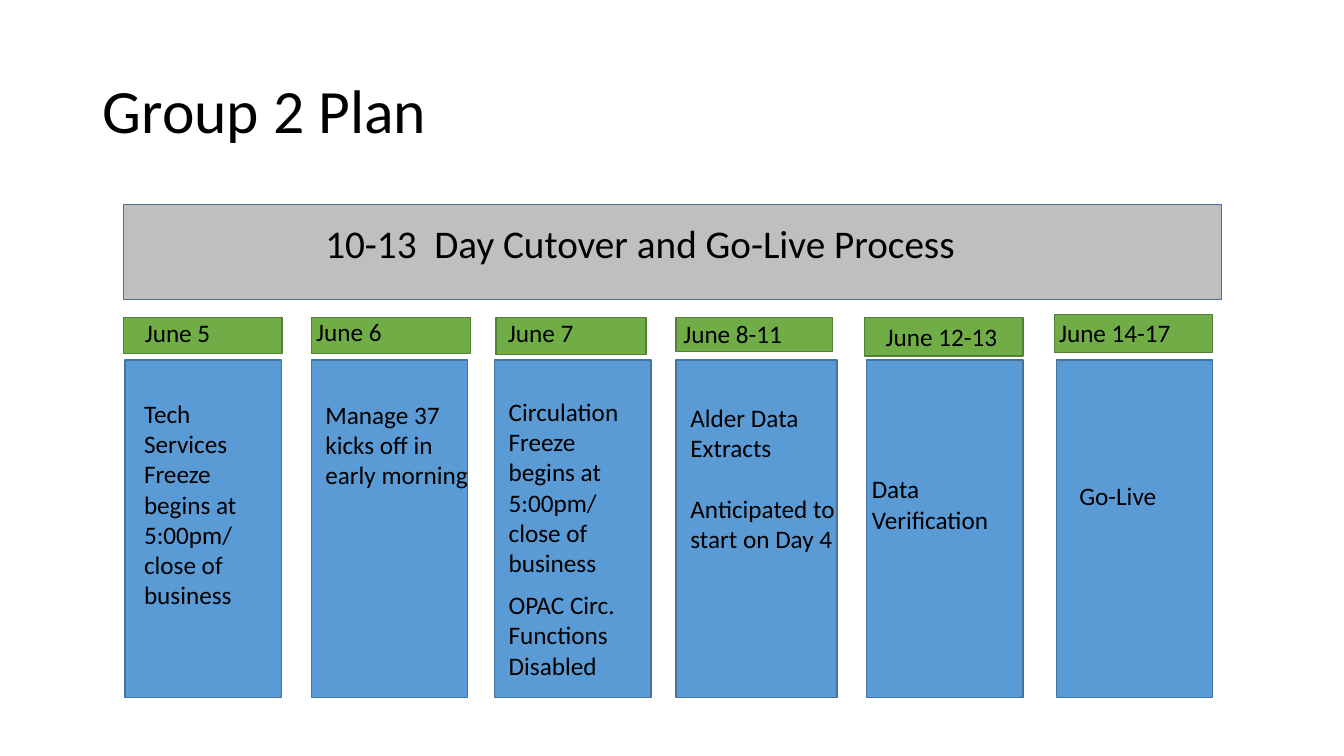
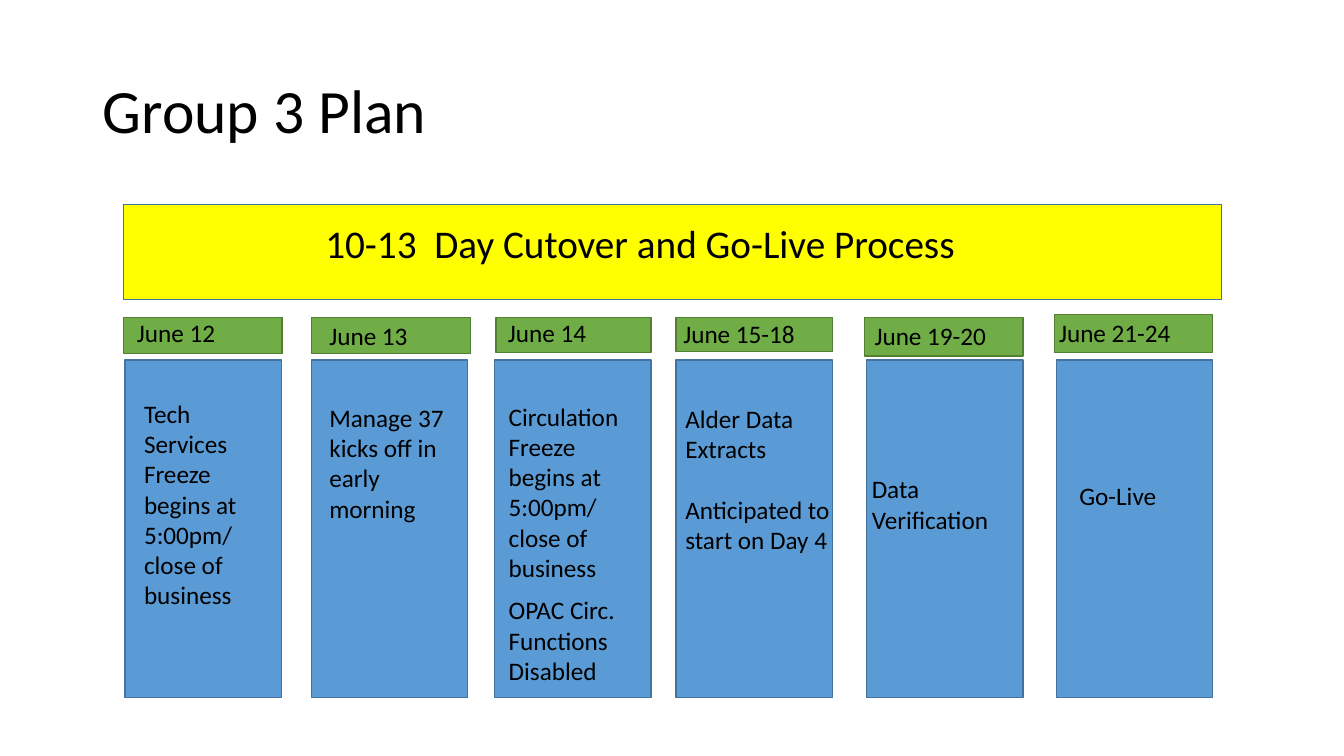
"""Build two cutover plan slides, each a band over six dated columns."""
from pptx import Presentation
from pptx.dml.color import RGBColor
from pptx.enum.shapes import MSO_SHAPE
from pptx.enum.text import MSO_ANCHOR, PP_ALIGN
from pptx.util import Cm, Pt

RECT = MSO_SHAPE.RECTANGLE
MIDDLE, TOP = MSO_ANCHOR.MIDDLE, MSO_ANCHOR.TOP
LEFT = PP_ALIGN.LEFT

FONT = "Calibri"
BLACK = RGBColor(0x00, 0x00, 0x00)
GREY = RGBColor(0xBF, 0xBF, 0xBF)
YELLOW = RGBColor(0xFF, 0xFF, 0x00)
BLUE = RGBColor(0x5B, 0x9B, 0xD5)
NAVY = RGBColor(0x43, 0x73, 0x9E)
GREEN = RGBColor(0x70, 0xAD, 0x47)
MOSS = RGBColor(0x53, 0x80, 0x35)

TITLE_BOX = (2.34, 1.02, 29.21, 3.68)
BAND_BOX = (3.12, 5.16, 27.66, 2.39)
BAND_TEXT = (7.95, 5.41, 18.01, 1.44)
BAND = "10-13  Day Cutover and Go-Live Process"
CARD_TOP, CARD_HIGH = 9.07, 8.51
CARD_LEFTS = (3.15, 7.85, 12.47, 17.04, 21.84, 26.62)
PAD, LINE = 0.25, 0.77

NOTES = [
    ["Tech Services Freeze begins at 5:00pm/ close of business"],
    ["Manage 37 kicks off in early morning"],
    ["Circulation Freeze begins at 5:00pm/ close of business"],
    ["Alder Data Extracts", "Anticipated to start on Day 4"],
    ["Data Verification"],
    ["Go-Live"],
    ["OPAC Circ. Functions Disabled"],
]

PLANS = [
    {
        "title": "Group 2 Plan",
        "band": GREY,
        "wide": 4.06,
        "tab": (3.78, 0.94),
        "dates": [
            ("June 5", 3.4, 7.87, 2.92),
            ("June 6", 7.72, 7.85, 2.92),
            ("June 7", 12.55, 7.87, 2.92),
            ("June 8-11", 16.97, 7.9, 3.61),
            ("June 12-13", 22.07, 7.98, 3.81),
            ("June 14-17", 26.44, 7.87, 3.81),
        ],
        "spots": [
            (3.38, 9.91, 3.18, 7),
            (7.95, 9.93, 4.42, 3),
            (12.57, 9.86, 3.71, 6),
            (17.15, 10.01, 4.85, 5),
            (21.72, 11.81, 3.86, 2),
            (26.95, 11.99, 2.79, 1),
            (12.57, 14.73, 4.85, 3),
        ],
    },
    {
        "title": "Group 3 Plan",
        "band": YELLOW,
        "wide": 3.94,
        "tab": (3.91, 0.89),
        "dates": [
            ("June 12", 3.2, 7.87, 2.92),
            ("June 13", 8.05, 7.95, 2.92),
            ("June 14", 12.55, 7.87, 2.92),
            ("June 15-18", 16.97, 7.9, 3.94),
            ("June 19-20", 21.79, 7.95, 3.81),
            ("June 21-24", 26.44, 7.87, 3.81),
        ],
        "spots": [
            (3.38, 9.91, 3.18, 7),
            (8.05, 10.01, 3.56, 4),
            (12.57, 9.98, 3.84, 6),
            (17.02, 10.03, 4.85, 5),
            (21.72, 11.81, 3.86, 2),
            (26.95, 11.99, 2.79, 1),
            (12.57, 14.86, 4.85, 3),
        ],
    },
]


def add_rect(slide, box, fill, edge):
    """Draw a flat filled rectangle with a thin edge."""
    rect = slide.shapes.add_shape(RECT, *map(Cm, box))
    rect.shadow.inherit = False
    rect.fill.solid()
    rect.fill.fore_color.rgb = fill
    rect.line.color.rgb = edge
    rect.line.width = Pt(1)


def write(frame, lines, size, anchor=TOP):
    """Fill a text frame, one line of spacing between paragraphs."""
    frame.word_wrap = True
    frame.vertical_anchor = anchor
    for i, line in enumerate(lines):
        para = frame.add_paragraph() if i else frame.paragraphs[0]
        para.alignment = LEFT
        if i:
            para.space_before = Pt(size * 1.22)
        run = para.add_run()
        run.text = line
        run.font.name = FONT
        run.font.size = Pt(size)
        run.font.color.rgb = BLACK


def add_text(slide, box, lines, size=18):
    """Place a text box."""
    write(slide.shapes.add_textbox(*map(Cm, box)).text_frame, lines, size)


def add_title(slide, text):
    """Move and format the title placeholder."""
    title = slide.shapes.title
    title.left, title.top, title.width, title.height = map(Cm, TITLE_BOX)
    write(title.text_frame, [text], 44, MIDDLE)
    title.text_frame.paragraphs[0].line_spacing = 0.9


def add_plan(deck, plan):
    """Add one plan slide."""
    slide = deck.slides.add_slide(deck.slide_layouts[5])
    add_title(slide, plan["title"])
    add_rect(slide, BAND_BOX, plan["band"], NAVY)
    add_text(slide, BAND_TEXT, [BAND], 28)
    tabs = [
        (3.12, 8, 3.99, 0.91),
        (7.85, 8, 4.01, 0.91),
        (12.5, 8, *plan["tab"]),
        (17.04, 8, 3.94, 0.86),
        (21.79, 8, 3.99, 0.97),
        (26.57, 7.92, 3.99, 0.97),
    ]
    for i, (left, tab) in enumerate(zip(CARD_LEFTS, tabs)):
        width = plan["wide"] if i == 3 else 3.94
        add_rect(slide, (left, CARD_TOP, width, CARD_HIGH), BLUE, NAVY)
        add_rect(slide, tab, GREEN, MOSS)
    for date, left, top, width in plan["dates"]:
        add_text(slide, (left, top, width, PAD + LINE), [date])
    for note, (left, top, width, rows) in zip(NOTES, plan["spots"]):
        add_text(slide, (left, top, width, PAD + LINE * rows), note)


def main():
    """Build and save the deck."""
    deck = Presentation()
    deck.slide_width, deck.slide_height = Cm(33.87), Cm(19.05)
    for plan in PLANS:
        add_plan(deck, plan)
    deck.save("out.pptx")


if __name__ == "__main__":
    main()
